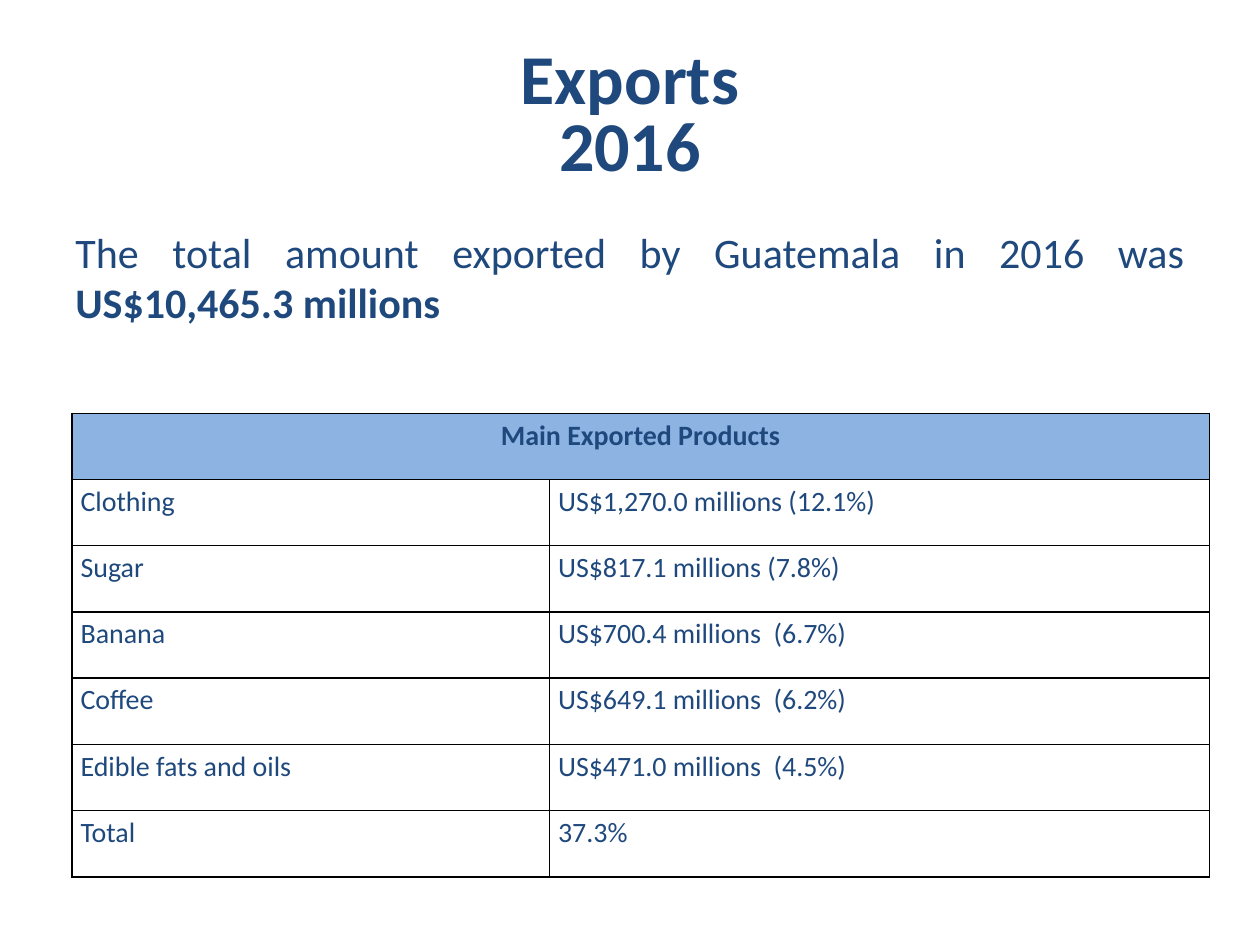
from lxml import etree
from pptx import Presentation, util as u
from pptx.dml.color import RGBColor
from pptx.enum import text as t
from pptx.oxml.ns import qn

WIDE, HIGH = 10, 7.5
NAVY, SKY, BLACK = "1F497D", "8DB3E2", "000000"
MID, JUST = t.PP_ALIGN.CENTER, t.PP_ALIGN.JUSTIFY
HEAD = "Main Exported Products"
GOODS = [
    ("Clothing", "US$1,270.0 millions (12.1%)"),
    ("Sugar", "US$817.1 millions (7.8%)"),
    ("Banana", "US$700.4 millions  (6.7%)"),
    ("Coffee", "US$649.1 millions  (6.2%)"),
    ("Edible fats and oils", "US$471.0 millions  (4.5%)"),
    ("Total", "37.3%"),
]
COLS = (3.79, 5.24)
ROW = 3.68 / (len(GOODS) + 1)


def paint(hue):
    return RGBColor.from_string(hue)


def assign(item, vals):
    for name, val in vals.items():
        setattr(item, name, val)


def write(para, runs, size, form):
    """Fill a paragraph with (text, bold) runs; a newline is a line break."""
    assign(para, form)
    for words, bold in runs:
        for i, line in enumerate(words.split("\n")):
            if i:
                para.add_line_break()
            run = para.add_run()
            run.text = line
            assign(run.font, {"name": "Calibri", "size": u.Pt(size), "bold": bold})
            run.font.color.rgb = paint(NAVY)


def add_text(slide, top, tall, runs, size, form, anchor):
    """Place a text box, sized in shares of the slide."""
    box = slide.shapes.add_textbox(
        u.Inches(0.05 * WIDE), u.Inches(top * HIGH),
        u.Inches(0.9 * WIDE), u.Inches(tall * HIGH))
    frame = box.text_frame
    assign(frame, {"word_wrap": True, "vertical_anchor": anchor,
                   "auto_size": t.MSO_AUTO_SIZE.NONE})
    write(frame.paragraphs[0], runs, size, form)


def edge(cell):
    """Draw thin black borders, which must come before the cell's fill."""
    props = cell._tc.get_or_add_tcPr()
    for i, side in enumerate(("lnL", "lnR", "lnT", "lnB")):
        line = etree.Element(qn("a:" + side), w=str(u.Pt(1)))
        fill = etree.SubElement(line, qn("a:solidFill"))
        etree.SubElement(fill, qn("a:srgbClr"), val=BLACK)
        props.insert(i, line)


def fill_cell(cell, words, align, bold=False):
    pad = u.Inches(0.07)
    assign(cell, {"margin_left": pad, "margin_right": pad,
                  "margin_top": 0, "margin_bottom": 0})
    form = {"alignment": align, "line_spacing": 1.15, "space_after": u.Pt(10)}
    write(cell.text_frame.paragraphs[0], [(words, bold)], 16, form)


def add_grid(slide):
    grid = slide.shapes.add_table(
        len(GOODS) + 1, len(COLS), u.Inches(0.57), u.Inches(3.28),
        u.Inches(sum(COLS)), u.Inches(ROW * (len(GOODS) + 1))).table
    assign(grid, {"first_row": False, "horz_banding": False})
    for col, wide in zip(grid.columns, COLS):
        col.width = u.Inches(wide)
    for row in grid.rows:
        row.height = u.Inches(ROW)
    for cell in grid.iter_cells():
        cell.fill.background()
        edge(cell)
    head = grid.cell(0, 0)
    head.merge(grid.cell(0, 1))
    head.fill.solid()
    head.fill.fore_color.rgb = paint(SKY)
    fill_cell(head, HEAD, MID, True)
    for r, pair in enumerate(GOODS, 1):
        for c, words in enumerate(pair):
            fill_cell(grid.cell(r, c), words, JUST)


def main():
    deck = Presentation()
    assign(deck, {"slide_width": u.Inches(WIDE), "slide_height": u.Inches(HIGH)})
    slide = deck.slides.add_slide(deck.slide_layouts[6])
    add_text(slide, 0.04, 0.17, [("Exports\n2016", True)], 40,
             {"alignment": MID, "line_spacing": 0.8}, t.MSO_ANCHOR.MIDDLE)
    total = [("The total amount exported by Guatemala in 2016 was ", False),
             ("US$10,465.3 millions", True)]
    add_text(slide, 0.233, 0.66, total, 24, {"alignment": JUST}, t.MSO_ANCHOR.TOP)
    add_grid(slide)
    deck.save("out.pptx")


if __name__ == "__main__":
    main()
